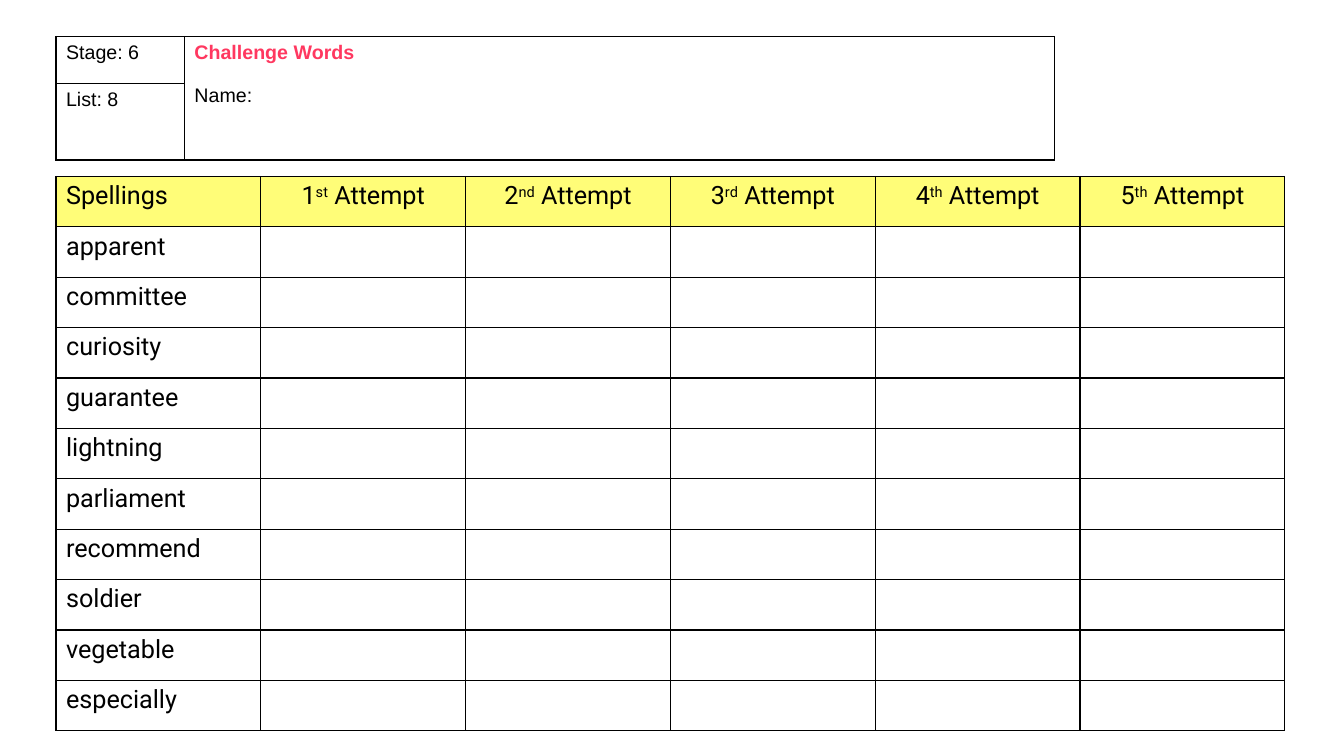
from dataclasses import dataclass

from lxml.etree import SubElement
from pptx import Presentation
from pptx.dml.color import RGBColor
from pptx.enum.text import PP_ALIGN
from pptx.oxml.ns import qn
from pptx.slide import Slide
from pptx.table import Table, _Cell
from pptx.text.text import _Paragraph
from pptx.util import Pt

COLORS = {"ink": "000000", "header": "FFFD78", "challenge": "FF3860"}
ATTEMPT_SUFFIXES = ["st", "nd", "rd", "th", "th"]
SPELLINGS = [
    "apparent", "committee", "curiosity", "guarantee", "lightning",
    "parliament", "recommend", "soldier", "vegetable", "especially",
]


@dataclass
class Grid:
    left: float
    top: float
    column_widths: list[float]
    row_heights: list[float]


@dataclass
class TextStyle:
    font: str
    size: float
    color: str = "ink"
    bold: bool = False


SPELLING_STYLE = TextStyle("Roboto", 18)
DETAIL_STYLE = TextStyle("Arial", 14)
CHALLENGE_STYLE = TextStyle("Arial", 14, "challenge", True)


def add_borders(cell: _Cell) -> None:
    properties = cell._tc.get_or_add_tcPr()
    for side in ("lnL", "lnR", "lnT", "lnB"):
        line = SubElement(properties, qn(f"a:{side}"), w=str(Pt(1)))
        fill = SubElement(line, qn("a:solidFill"))
        SubElement(fill, qn("a:srgbClr"), val=COLORS["ink"])


def add_grid(slide: Slide, grid: Grid) -> Table:
    shape = slide.shapes.add_table(
        len(grid.row_heights), len(grid.column_widths),
        Pt(grid.left), Pt(grid.top),
        Pt(sum(grid.column_widths)), Pt(sum(grid.row_heights)),
    )
    table = shape.table
    table.first_row = False
    table.horz_banding = False
    for column, width in zip(table.columns, grid.column_widths):
        column.width = Pt(width)
    for row, height in zip(table.rows, grid.row_heights):
        row.height = Pt(height)
    for cell in table.iter_cells():
        add_borders(cell)
        cell.fill.background()
    return table


def format_runs(paragraph: _Paragraph, style: TextStyle) -> None:
    for run in paragraph.runs:
        run.font.name = style.font
        run.font.size = Pt(style.size)
        run.font.bold = style.bold
        run.font.color.rgb = RGBColor.from_string(COLORS[style.color])


def write_cell(cell: _Cell, text: str, styles: list[TextStyle]) -> None:
    cell.text_frame.text = text
    for paragraph, style in zip(cell.text_frame.paragraphs, styles):
        format_runs(paragraph, style)


def write_attempt(cell: _Cell, number: int, suffix: str) -> None:
    paragraph = cell.text_frame.paragraphs[0]
    paragraph.alignment = PP_ALIGN.CENTER
    for text in (str(number), suffix, " Attempt"):
        paragraph.add_run().text = text
    format_runs(paragraph, SPELLING_STYLE)
    paragraph.runs[1].font._element.set("baseline", "30000")


def add_spelling_table(slide: Slide) -> None:
    row_count = len(SPELLINGS) + 1
    column_count = len(ATTEMPT_SUFFIXES) + 1
    table = add_grid(slide, Grid(40, 126, [146.3] * column_count, [36] * row_count))
    for row, text in enumerate(["Spellings", *SPELLINGS]):
        write_cell(table.cell(row, 0), text, [SPELLING_STYLE])
    for number, suffix in enumerate(ATTEMPT_SUFFIXES, start=1):
        write_attempt(table.cell(0, number), number, suffix)
    for cell in table.rows[0].cells:
        cell.fill.solid()
        cell.fill.fore_color.rgb = RGBColor.from_string(COLORS["header"])


def add_details_table(slide: Slide) -> None:
    table = add_grid(slide, Grid(40, 26, [91.7, 621.3], [33.8, 54.5]))
    write_cell(table.cell(0, 0), "Stage: 6", [DETAIL_STYLE])
    write_cell(table.cell(1, 0), "List: 8", [DETAIL_STYLE])
    challenge = table.cell(0, 1)
    challenge.merge(table.cell(1, 1))
    write_cell(challenge, "Challenge Words\nName:", [CHALLENGE_STYLE, DETAIL_STYLE])
    challenge.text_frame.paragraphs[1].space_before = Pt(15.5)


def main() -> None:
    presentation = Presentation()
    presentation.slide_width = Pt(960)
    presentation.slide_height = Pt(540)
    slide = presentation.slides.add_slide(presentation.slide_layouts[6])
    add_spelling_table(slide)
    add_details_table(slide)
    presentation.save("out.pptx")


if __name__ == "__main__":
    main()
